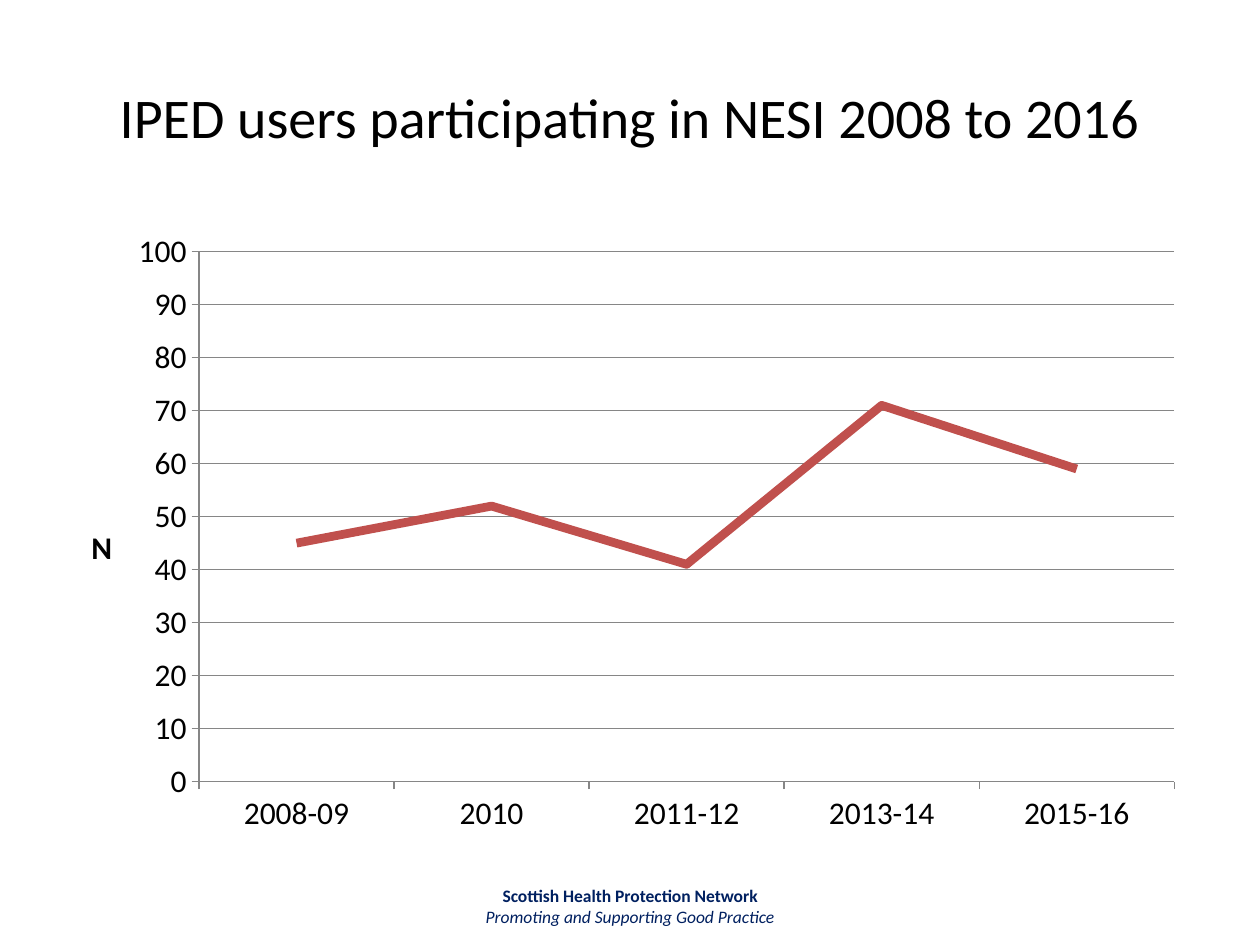
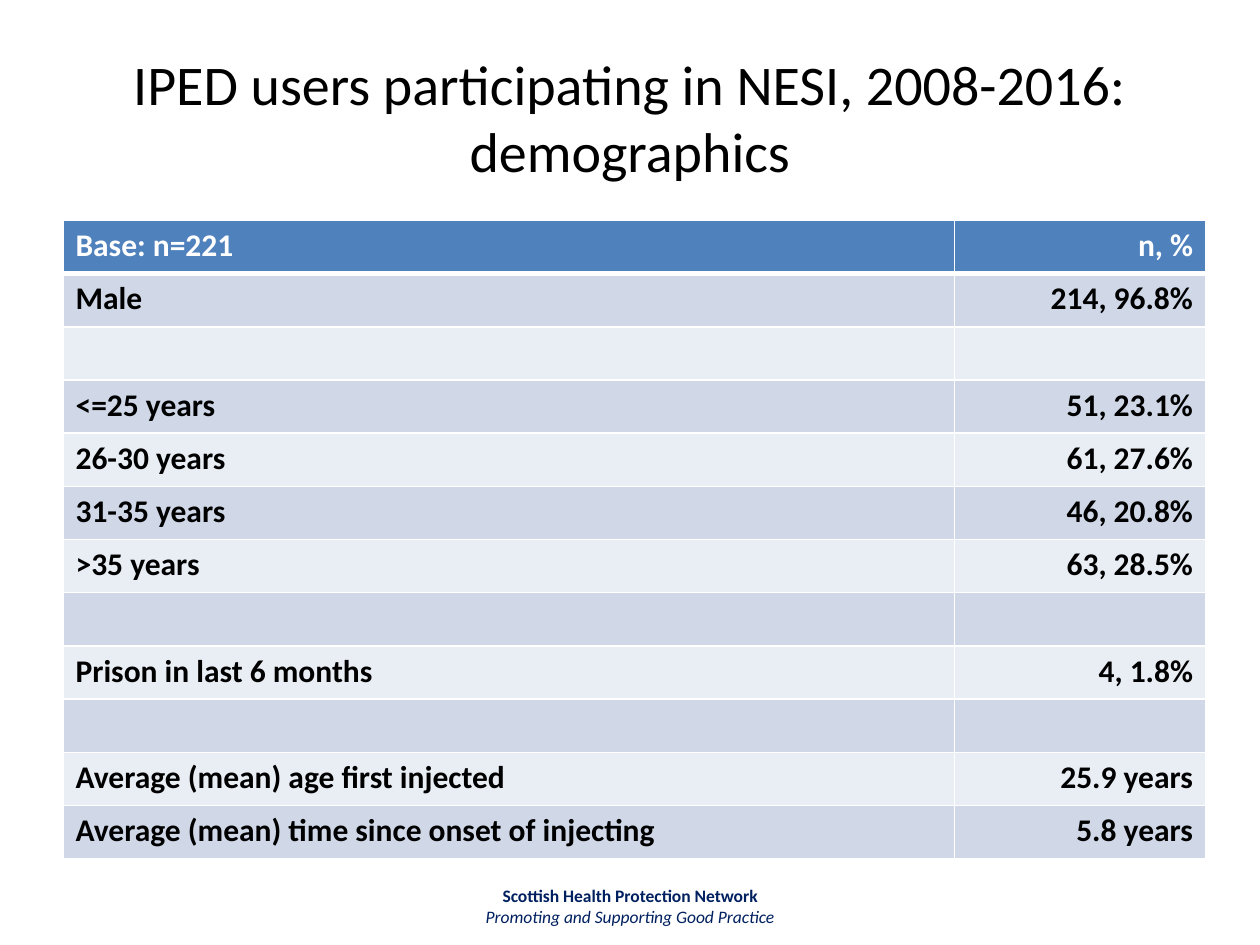
"""Build two slides on IPED users in NESI: a trend chart and a demographics table."""
from lxml.etree import SubElement
from pptx import Presentation
from pptx.chart.data import CategoryChartData
from pptx.dml.color import RGBColor
from pptx.enum.chart import XL_CHART_TYPE as ChartType, XL_TICK_MARK as Tick
from pptx.enum.text import MSO_ANCHOR as Anchor, PP_ALIGN as Align
from pptx.oxml import parse_xml
from pptx.oxml.ns import nsdecls, qn
from pptx.util import Pt

CHART_TITLE = "IPED users participating in NESI 2008 to 2016"
TABLE_TITLE = "IPED users participating in NESI, 2008-2016: demographics"
FOOTER = [
    ("Scottish Health Protection Network", {"bold": True}),
    ("Promoting and Supporting Good Practice", {"italic": True}),
]
PARTICIPANTS = {"2008-09": 45, "2010": 52, "2011-12": 41, "2013-14": 71, "2015-16": 59}
DEMOGRAPHICS = [
    ("Base: n=221", "n, %"),
    ("Male", "214, 96.8%"),
    ("", ""),
    ("<=25 years", "51, 23.1%"),
    ("26-30 years", "61, 27.6%"),
    ("31-35 years", "46, 20.8%"),
    (">35 years", "63, 28.5%"),
    ("", ""),
    ("Prison in last 6 months", "4, 1.8%"),
    ("", ""),
    ("Average (mean) age first injected", "25.9 years"),
    ("Average (mean) time since onset of injecting", "5.8 years"),
]

COLOURS = {
    "text": "000000", "white": "FFFFFF", "footer": "002060", "grid": "868686",
    "line": "C0504D", "header": "4F81BD", "odd": "D0D8E8", "even": "E9EDF4",
}
FONT = "Calibri"
LEFT, CONTENT_TOP, WIDTH = 36, 126, 648
COLUMN_WIDTHS = (509.4, 143.6)
ROW_HEIGHT = 30.4


def colour(name):
    return RGBColor.from_string(COLOURS[name])


def style(font, size, name="text", bold=False, italic=False):
    font.name, font.size, font.bold, font.italic = FONT, Pt(size), bold, italic
    font.color.rgb = colour(name)


def write(para, text, align, size, name="text", **look):
    para.alignment = align
    if text:
        span = para.add_run()
        span.text = text
        style(span.font, size, name, **look)


def text_box(page, left, top, width, height, anchor):
    frame = page.shapes.add_textbox(Pt(left), Pt(top), Pt(width), Pt(height)).text_frame
    frame.word_wrap = True
    frame.vertical_anchor = anchor
    return frame


def add_page(deck, title):
    page = deck.slides.add_slide(deck.slide_layouts[6])
    footer = text_box(page, 246, 502, 228, 29, Anchor.TOP)
    for index, (text, look) in enumerate(FOOTER):
        para = footer.add_paragraph() if index else footer.paragraphs[0]
        write(para, text, Align.CENTER, 10, "footer", **look)
    heading = text_box(page, LEFT, 21.6, WIDTH, 90, Anchor.MIDDLE)
    write(heading.paragraphs[0], title, Align.CENTER, 32)
    return page


def place(element, position, **settings):
    """Give a chart part a manual layout."""
    for old in element.findall(qn("c:layout")):
        element.remove(old)
    layout = parse_xml(f"<c:layout {nsdecls('c')}><c:manualLayout/></c:layout>")
    for tag, value in settings.items():
        SubElement(layout[0], qn(f"c:{tag}")).set("val", str(value))
    element.insert(position, layout)


def add_trend(page):
    data = CategoryChartData()
    data.categories = list(PARTICIPANTS)
    data.add_series("Series 1", list(PARTICIPANTS.values()))
    chart = page.shapes.add_chart(ChartType.LINE, Pt(LEFT), Pt(CONTENT_TOP),
                                  Pt(WIDTH), Pt(356.4), data).chart
    chart.has_legend = chart.has_title = False
    style(chart.font, 18)
    plot = chart.plots[0]
    plot.vary_by_categories = False
    series = plot.series[0]
    series.smooth = False
    series.format.line.width = Pt(5)
    series.format.line.color.rgb = colour("line")
    values = chart.value_axis
    values.minimum_scale, values.maximum_scale, values.major_unit = 0, 100, 10
    values.has_major_gridlines = True
    for axis in (chart.category_axis, values):
        axis.major_tick_mark = Tick.OUTSIDE
    for part in (chart.category_axis, values, values.major_gridlines):
        part.format.line.color.rgb = colour("grid")
        part.format.line.width = Pt(0.75)
    frame = values.axis_title.text_frame
    write(frame.paragraphs[0], "N", Align.CENTER, 18, bold=True)
    body = frame._txBody.bodyPr
    body.set("rot", "0")
    body.set("vert", "horz")
    place(values.axis_title._element, 1, xMode="edge", yMode="edge", x=0.02, y=0.48)
    place(chart._chartSpace.chart.plotArea, 0, layoutTarget="inner", xMode="edge",
          yMode="edge", x=0.12, y=0.05, w=0.86, h=0.85)


def add_borders(cell, top, bottom):
    properties = cell._tc.get_or_add_tcPr()
    for side, width in (("L", 1), ("R", 1), ("T", top), ("B", bottom)):
        properties.append(parse_xml(
            f'<a:ln{side} {nsdecls("a")} w="{Pt(width)}"><a:solidFill>'
            f'<a:srgbClr val="{COLOURS["white"]}"/></a:solidFill></a:ln{side}>'))


def add_demographics(page):
    rows = len(DEMOGRAPHICS)
    table = page.shapes.add_table(rows, 2, Pt(LEFT), Pt(CONTENT_TOP), Pt(sum(COLUMN_WIDTHS)),
                                  Pt(rows * ROW_HEIGHT)).table
    for column, width in zip(table.columns, COLUMN_WIDTHS):
        column.width = Pt(width)
    for index, texts in enumerate(DEMOGRAPHICS):
        table.rows[index].height = Pt(ROW_HEIGHT)
        fill = "header" if index == 0 else "odd" if index % 2 else "even"
        for column, (text, align) in enumerate(zip(texts, (Align.LEFT, Align.RIGHT))):
            cell = table.cell(index, column)
            add_borders(cell, 3 if index == 1 else 1, 3 if index == 0 else 1)
            cell.fill.solid()
            cell.fill.fore_color.rgb = colour(fill)
            write(cell.text_frame.paragraphs[0], text, align, 18,
                  "text" if index else "white", bold=True)


def main():
    deck = Presentation()
    deck.slide_width, deck.slide_height = Pt(720), Pt(540)
    add_trend(add_page(deck, CHART_TITLE))
    add_demographics(add_page(deck, TABLE_TITLE))
    deck.save("out.pptx")


if __name__ == "__main__":
    main()
